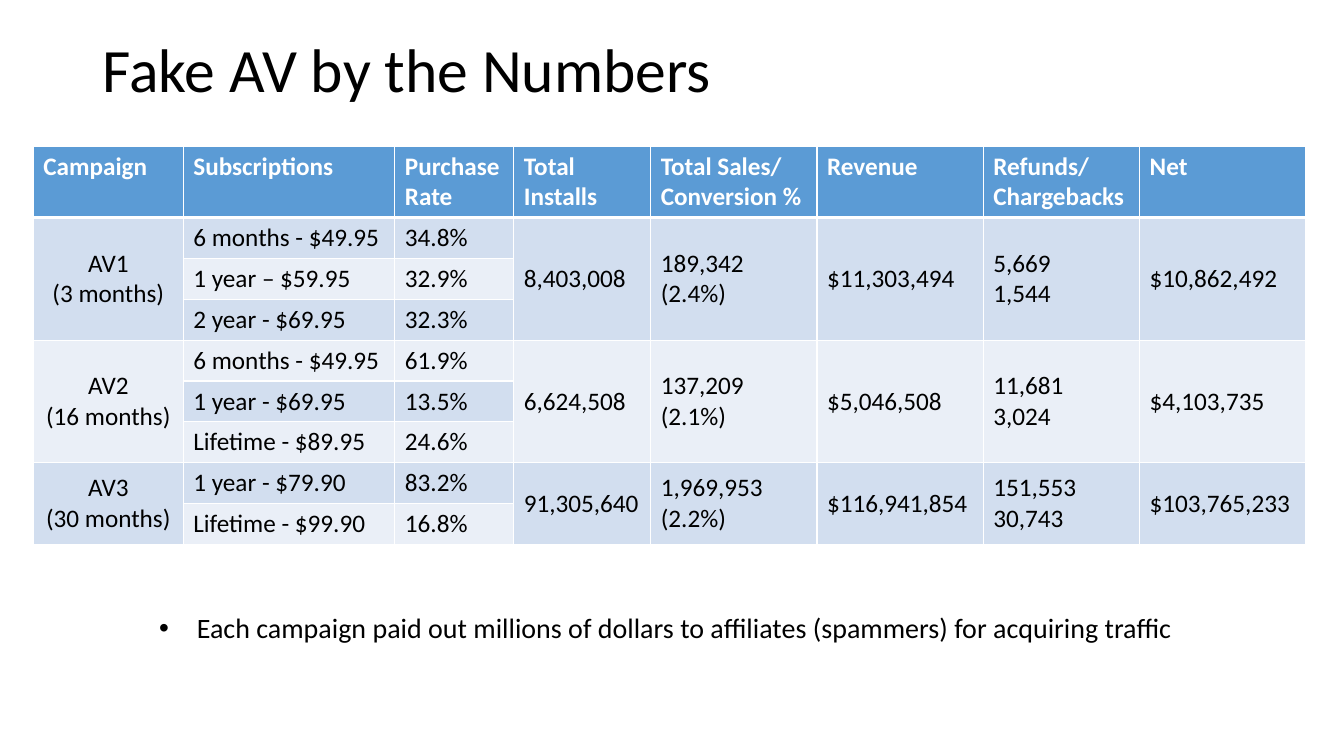
from lxml.etree import SubElement as Sub
from pptx import Presentation
from pptx.dml.color import RGBColor
from pptx.enum.text import MSO_ANCHOR as Anchor, MSO_AUTO_SIZE as Fit, PP_ALIGN as Align
from pptx.oxml.ns import qn
from pptx.util import Cm, Pt

TITLE = "Fake AV by the Numbers"
NOTE = "Each campaign paid out millions of dollars to affiliates (spammers) for acquiring traffic"
HEADS = ["Campaign", "Subscriptions", "Purchase Rate", "Total Installs",
         "Total Sales/\nConversion %", "Revenue", "Refunds/\nChargebacks", "Net"]
CAMPAIGNS = [
    ("AV1\n(3 months)",
     [("6 months - $49.95", "34.8%"), ("1 year – $59.95", "32.9%"), ("2 year - $69.95", "32.3%")],
     ["8,403,008", "189,342\n(2.4%)", "$11,303,494", "5,669\n1,544", "$10,862,492"]),
    ("AV2\n(16 months)",
     [("6 months - $49.95", "61.9%"), ("1 year - $69.95", "13.5%"), ("Lifetime - $89.95", "24.6%")],
     ["6,624,508", "137,209\n(2.1%)", "$5,046,508", "11,681\n3,024", "$4,103,735"]),
    ("AV3\n(30 months)",
     [("1 year - $79.90", "83.2%"), ("Lifetime - $99.90", "16.8%")],
     ["91,305,640", "1,969,953\n(2.2%)", "$116,941,854", "151,553\n30,743", "$103,765,233"]),
]
WIDTHS = [3.78, 5.33, 3.0, 3.45, 4.19, 4.19, 3.94, 4.19]
HEAD_H, ROW_H = 1.8, 1.03

BLACK = RGBColor(0x00, 0x00, 0x00)
WHITE = RGBColor(0xFF, 0xFF, 0xFF)
BLUE = RGBColor(0x5B, 0x9B, 0xD5)
BANDS = [RGBColor(0xEA, 0xEF, 0xF7), RGBColor(0xD2, 0xDE, 0xEF)]


def style(para, size, color=BLACK, bold=False):
    font = para.font
    font.name, font.size, font.bold = "Calibri", Pt(size), bold
    font.color.rgb = color


def border(cell, row):
    props = cell._tc.get_or_add_tcPr()
    for side in "LRTB":
        thick = (row, side) in [(0, "B"), (1, "T")]
        line = Sub(props, qn(f"a:ln{side}"), w=str(Pt(3 if thick else 1)))
        Sub(Sub(line, qn("a:solidFill")), qn("a:srgbClr"), val=str(WHITE))


def paint(cell, row):
    border(cell, row)
    cell.fill.solid()
    cell.fill.fore_color.rgb = BANDS[row % 2] if row else BLUE


def write(cell, text, color=BLACK, bold=False, align=Align.LEFT):
    cell.text = text
    for para in cell.text_frame.paragraphs:
        para.alignment = align
        style(para, 18, color, bold)


def add_box(slide, left, top, width, height, text):
    frame = slide.shapes.add_textbox(Cm(left), Cm(top), Cm(width), Cm(height)).text_frame
    frame.text = text
    return frame, frame.paragraphs[0]


def add_grid(slide):
    count = sum(len(plans) for _, plans, _ in CAMPAIGNS)
    grid = slide.shapes.add_table(count + 1, len(HEADS), Cm(0.84), Cm(3.68),
                                  Cm(sum(WIDTHS)), Cm(HEAD_H + count * ROW_H)).table
    for col, width in zip(grid.columns, WIDTHS):
        col.width = Cm(width)
    for i, row in enumerate(grid.rows):
        row.height = Cm(ROW_H if i else HEAD_H)
        for cell in row.cells:
            paint(cell, i)
    for j, head in enumerate(HEADS):
        write(grid.cell(0, j), head, WHITE, True)

    top = 1
    for name, plans, totals in CAMPAIGNS:
        for i, plan in enumerate(plans, top):
            for j, text in enumerate(plan, 1):
                write(grid.cell(i, j), text)
        last = top + len(plans) - 1
        for j, text in [(0, name), *enumerate(totals, 3)]:
            cell = grid.cell(top, j)
            cell.merge(grid.cell(last, j))
            cell.vertical_anchor = Anchor.MIDDLE
            write(cell, text, align=Align.LEFT if j else Align.CENTER)
        top = last + 1


def main():
    deck = Presentation()
    deck.slide_width, deck.slide_height = Cm(33.87), Cm(19.05)
    slide = deck.slides.add_slide(deck.slide_layouts[6])

    frame, para = add_box(slide, 2.33, 0, 29.21, 3.68, TITLE)
    frame.word_wrap = True
    frame.vertical_anchor = Anchor.MIDDLE
    para.line_spacing = 0.9
    style(para, 44)

    add_grid(slide)

    frame, para = add_box(slide, 3.76, 15.27, 26.31, 1.11, NOTE)
    frame.word_wrap = False
    frame.auto_size = Fit.SHAPE_TO_FIT_TEXT
    props = para._p.get_or_add_pPr()
    props.set("marL", str(Cm(0.95)))
    props.set("indent", str(-Cm(0.95)))
    Sub(props, qn("a:buFont"), typeface="Arial")
    Sub(props, qn("a:buChar"), char="•")
    style(para, 20)

    deck.save("out.pptx")


if __name__ == "__main__":
    main()
